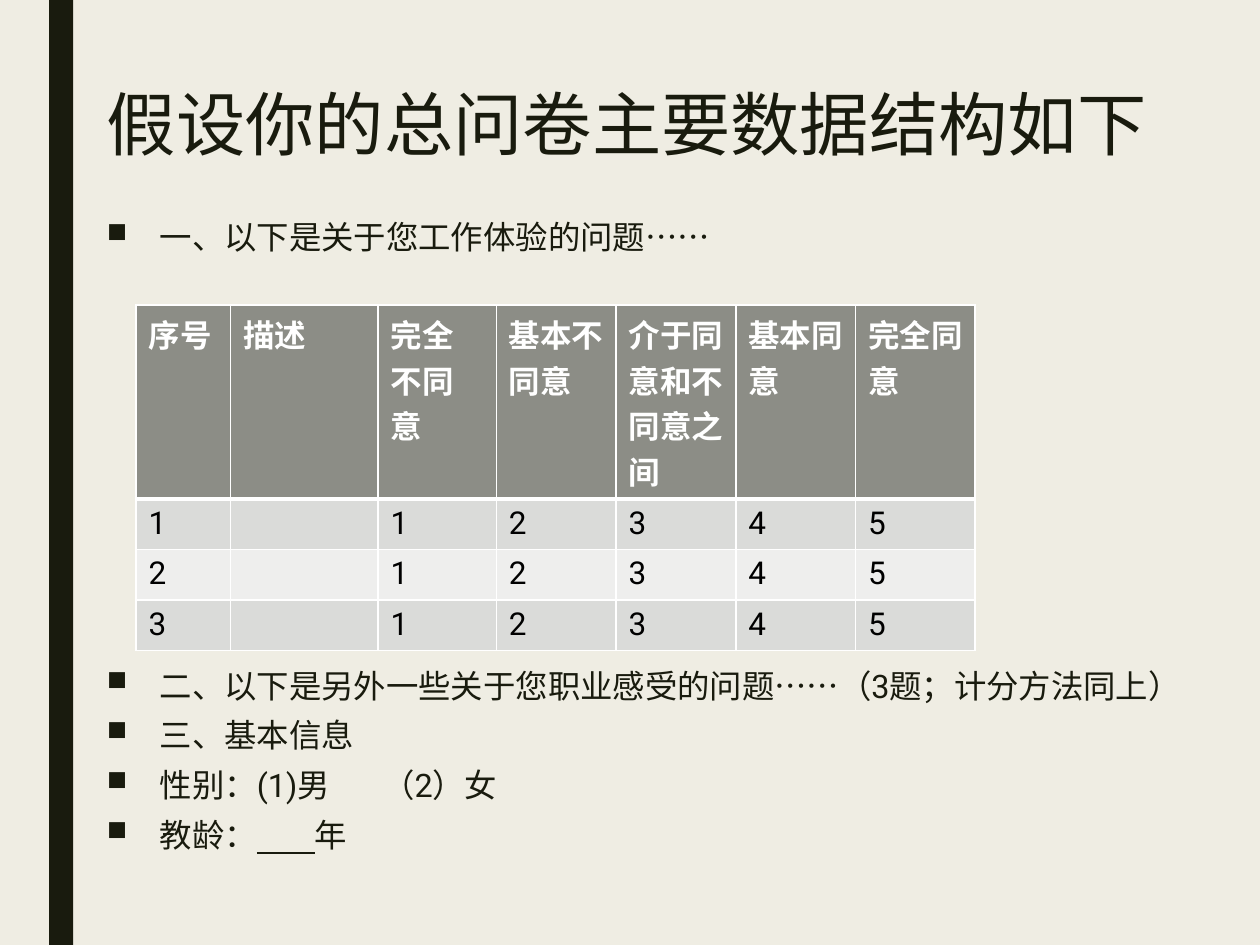
from lxml import etree
from pptx import Presentation
from pptx.dml.color import RGBColor
from pptx.enum.shapes import MSO_SHAPE
from pptx.enum.text import MSO_ANCHOR
from pptx.oxml.ns import qn
from pptx.util import Emu, Inches, Pt

RECTANGLE = MSO_SHAPE.RECTANGLE
TOP = MSO_ANCHOR.TOP

CREAM = RGBColor(0xEF, 0xED, 0xE3)
INK = RGBColor(0x19, 0x1B, 0x0E)
WHITE = RGBColor(0xFF, 0xFF, 0xFF)
BLACK = RGBColor(0, 0, 0)
HEADER_GREY = RGBColor(0x8C, 0x8D, 0x86)
BANDS = (RGBColor(0xEE, 0xEE, 0xED), RGBColor(0xDA, 0xDB, 0xD9))

FONT = "Roboto"
WIDTH, HEIGHT = Inches(10), Inches(7.5)
LEFT = 0.075  # shared left edge of title and body, share of slide width

HEADINGS = ["序号", "描述", "完全不同意", "基本不同意",
            "介于同意和不同意之间", "基本同意", "完全同意"]
SCORES = ["1", "2", "3", "4", "5"]
ROWS = [HEADINGS] + [[number, ""] + SCORES for number in ("1", "2", "3")]
COLUMN_WIDTHS = [0.75, 1.17, 0.94] + [0.95] * 4
ROW_HEIGHTS = [1.54] + [0.4] * 3  # the header holds four lines

BODY_FORMAT = {"line_spacing": 0.74, "space_before": Pt(10), "space_after": Pt(2)}
TABLE_GAP = Pt(238)  # room for the table between the first two items
FILL_IN = " " * 8  # underlined, it shows as the line to write on

# Each item is a list of (text, underlined, letter spacing in points)
ITEMS = [
    [("一、以下是关于您工作体验的问题……", False, 0)],
    [("二、以下是另外一些关于您职业感受的问题……（3题；计分方法同上）", False, 0)],
    [("三、基本信息", False, 0)],
    [("性别：(1)", False, 0), ("男", False, 30), ("（2）女", False, 0)],
    [("教龄：", False, 0), (FILL_IN, True, 0), ("年", False, 0)],
]


def share(x, y, width, height):
    """Turn shares of the slide's size into lengths."""
    return (Emu(int(x * WIDTH)), Emu(int(y * HEIGHT)),
            Emu(int(width * WIDTH)), Emu(int(height * HEIGHT)))


def add_run(paragraph, text, size, color, bold=False, underline=False):
    run = paragraph.add_run()
    run.text = text
    style = {"name": FONT, "size": Pt(size), "bold": bold, "underline": underline}
    for key, value in style.items():
        setattr(run.font, key, value)
    run.font.color.rgb = color
    return run


def add_frame(slide, box):
    frame = slide.shapes.add_textbox(*share(*box)).text_frame
    frame.word_wrap = True
    frame.vertical_anchor = TOP
    return frame


def add_side_bar(slide):
    bar = slide.shapes.add_shape(RECTANGLE, *share(0.039, 0, 0.019, 1))
    bar.shadow.inherit = False
    bar.fill.solid()
    bar.fill.fore_color.rgb = INK
    bar.line.fill.background()


def add_title(slide, text):
    paragraph = add_frame(slide, (LEFT, 0.09, 0.858, 0.187)).paragraphs[0]
    paragraph.line_spacing = 0.89
    add_run(paragraph, text, 39.6, INK)


def add_bullet(paragraph):
    properties = paragraph._p.get_or_add_pPr()
    properties.set("marL", str(Inches(0.42)))
    properties.set("indent", str(Inches(-0.42)))
    etree.SubElement(properties, qn("a:buSzPct")).set("val", "85000")
    etree.SubElement(properties, qn("a:buChar")).set("char", "■")


def add_questions(slide):
    frame = add_frame(slide, (LEFT, 0.233, 0.9, 0.733))
    for index, item in enumerate(ITEMS):
        paragraph = frame.add_paragraph() if index else frame.paragraphs[0]
        for key, value in BODY_FORMAT.items():
            setattr(paragraph, key, value)
        if index == 1:
            paragraph.space_before = TABLE_GAP
        add_bullet(paragraph)
        for text, underline, spacing in item:
            run = add_run(paragraph, text, 18.5, INK, underline=underline)
            if spacing:
                run.font._element.set("spc", str(spacing * 100))


def add_borders(cell, widths):
    properties = cell._tc.get_or_add_tcPr()
    for side, width in widths.items():
        line = etree.SubElement(properties, qn(f"a:ln{side}"), w=str(Pt(width)))
        fill = etree.SubElement(line, qn("a:solidFill"))
        etree.SubElement(fill, qn("a:srgbClr"), val=str(WHITE))


def add_scale_table(slide):
    table = slide.shapes.add_table(
        len(ROWS), len(HEADINGS), Inches(1.08), Inches(2.42),
        Inches(sum(COLUMN_WIDTHS)), Inches(sum(ROW_HEIGHTS))).table
    for column, width in zip(table.columns, COLUMN_WIDTHS):
        column.width = Inches(width)
    for row, height in zip(table.rows, ROW_HEIGHTS):
        row.height = Inches(height)
    for r, texts in enumerate(ROWS):
        header = r == 0
        for c, text in enumerate(texts):
            cell = table.cell(r, c)
            add_borders(cell, {"L": 1, "R": 1, "T": 3 if r == 1 else 1,
                               "B": 3 if header else 1})
            cell.fill.solid()
            cell.fill.fore_color.rgb = HEADER_GREY if header else BANDS[r % 2]
            paragraph = cell.text_frame.paragraphs[0]
            paragraph.font.size = Pt(18)
            if text:
                add_run(paragraph, text, 18, WHITE if header else BLACK, bold=header)


def main():
    deck = Presentation()
    deck.slide_width, deck.slide_height = WIDTH, HEIGHT
    slide = deck.slides.add_slide(deck.slide_layouts[6])
    slide.background.fill.solid()
    slide.background.fill.fore_color.rgb = CREAM

    # Frame and heading
    add_side_bar(slide)
    add_title(slide, "假设你的总问卷主要数据结构如下")

    # Questionnaire outline with the rating scale
    add_questions(slide)
    add_scale_table(slide)
    deck.save("out.pptx")


if __name__ == "__main__":
    main()
